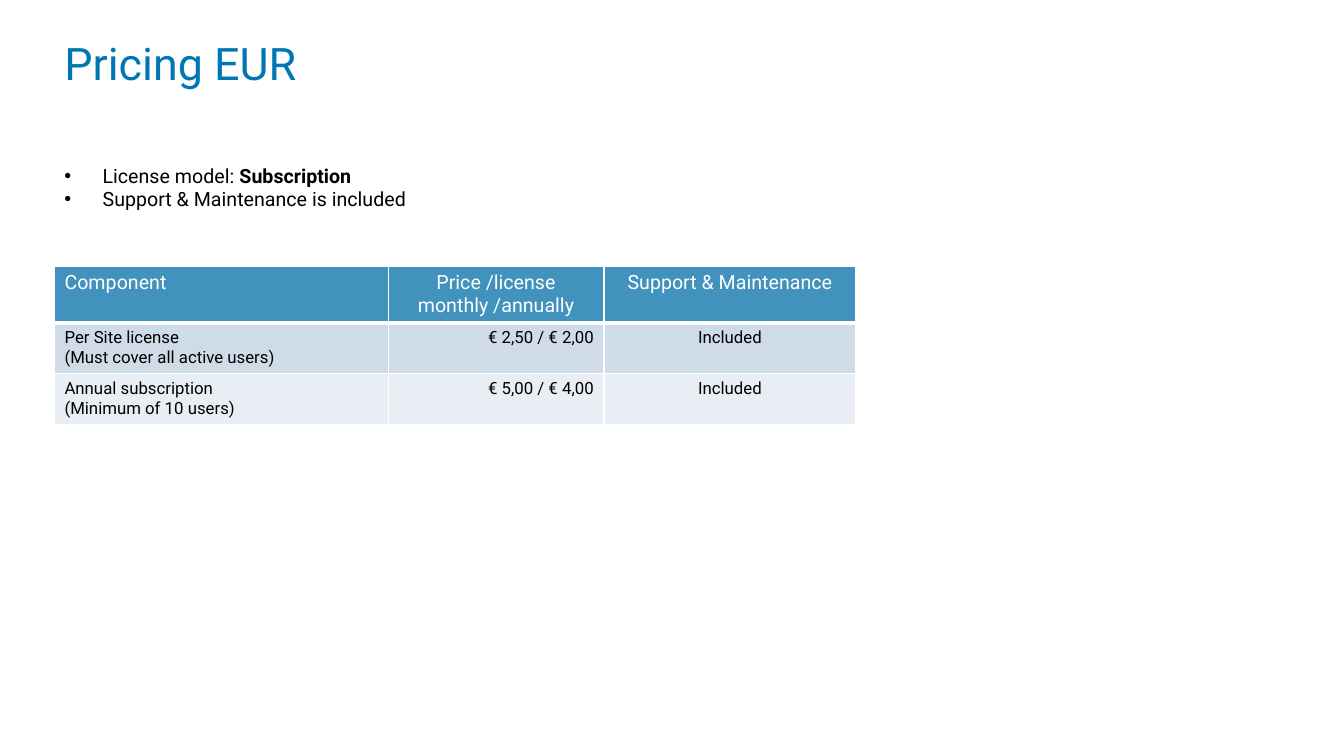
from dataclasses import dataclass

from lxml import etree
from pptx import Presentation
from pptx.dml.color import RGBColor
from pptx.enum.text import MSO_ANCHOR, PP_ALIGN
from pptx.oxml.ns import qn
from pptx.util import Inches, Pt

LEFT, CENTER, RIGHT = PP_ALIGN.LEFT, PP_ALIGN.CENTER, PP_ALIGN.RIGHT
MIDDLE, BOTTOM = MSO_ANCHOR.MIDDLE, MSO_ANCHOR.BOTTOM


@dataclass(frozen=True)
class Theme:
    font: str = "Roboto"
    title: str = "0077B3"
    text: str = "000000"
    white: str = "FFFFFF"
    header: str = "4192BD"
    bands: tuple = ("CFDCE8", "E9EEF4")
    title_size: int = 32
    body_size: int = 14
    cell_size: int = 12


THEME = Theme()
MARGIN = 0.54
COLUMN_WIDTHS = (3.31, 2.14, 2.5)
ROW_HEIGHTS = (0.56, 0.5, 0.5)
HEADER_ALIGNMENTS = (LEFT, CENTER, CENTER)
BODY_ALIGNMENTS = (LEFT, RIGHT, CENTER)
BULLETS = (
    (("License model: ", False), ("Subscription", True)),
    (("Support & Maintenance is included", False),),
)
PRICES = (
    ("Component", "Price /license\nmonthly /annually", "Support & Maintenance"),
    ("Per Site license\n(Must cover all active users)", "€ 2,50 / € 2,00", "Included"),
    ("Annual subscription\v(Minimum of 10 users)", "€ 5,00 / € 4,00", "Included"),
)


def set_font(paragraph, size, color):
    font = paragraph.font
    font.name = THEME.font
    font.size = Pt(size)
    font.color.rgb = RGBColor.from_string(color)


def add_text_box(slide, top, width, height, anchor):
    box = slide.shapes.add_textbox(
        Inches(MARGIN), Inches(top), Inches(width), Inches(height))
    frame = box.text_frame
    frame.word_wrap = True
    frame.vertical_anchor = anchor
    return frame


def add_title(slide, text):
    paragraph = add_text_box(slide, 0.36, 12.25, 0.6, MIDDLE).paragraphs[0]
    paragraph.text = text
    paragraph.line_spacing = 0.9
    set_font(paragraph, THEME.title_size, THEME.title)


def add_bullet_mark(paragraph):
    properties = paragraph._p.get_or_add_pPr()
    indent = Inches(0.38)
    properties.set("marL", str(indent))
    properties.set("indent", str(-indent))
    etree.SubElement(properties, qn("a:buFont"), typeface="Arial")
    etree.SubElement(properties, qn("a:buChar"), char="•")


def add_bullets(slide, bullets):
    frame = add_text_box(slide, 1.28, 11.26, 0.86, BOTTOM)
    for index, runs in enumerate(bullets):
        paragraph = frame.add_paragraph() if index else frame.paragraphs[0]
        add_bullet_mark(paragraph)
        set_font(paragraph, THEME.body_size, THEME.text)
        for text, bold in runs:
            run = paragraph.add_run()
            run.text = text
            run.font.bold = bold


def add_borders(cell, top, bottom):
    """Draw white borders; the top and bottom widths are in points."""
    properties = cell._tc.get_or_add_tcPr()
    for side, width in (("L", 1), ("R", 1), ("T", top), ("B", bottom)):
        line = etree.SubElement(properties, qn(f"a:ln{side}"), w=str(Pt(width)))
        fill = etree.SubElement(line, qn("a:solidFill"))
        etree.SubElement(fill, qn("a:srgbClr"), val=THEME.white)


def fill_cell(cell, text, alignment, size, color, background):
    cell.text = text
    cell.fill.solid()
    cell.fill.fore_color.rgb = RGBColor.from_string(background)
    for paragraph in cell.text_frame.paragraphs:
        paragraph.alignment = alignment
        set_font(paragraph, size, color)
        paragraph.font.bold = False


def add_price_table(slide, rows):
    table = slide.shapes.add_table(
        len(rows), len(COLUMN_WIDTHS), Inches(MARGIN), Inches(2.64),
        Inches(sum(COLUMN_WIDTHS)), Inches(sum(ROW_HEIGHTS))).table
    for column, width in zip(table.columns, COLUMN_WIDTHS):
        column.width = Inches(width)
    for row_index, texts in enumerate(rows):
        table.rows[row_index].height = Inches(ROW_HEIGHTS[row_index])
        if row_index == 0:
            alignments = HEADER_ALIGNMENTS
            style = (THEME.body_size, THEME.white, THEME.header)
        else:
            alignments = BODY_ALIGNMENTS
            style = (THEME.cell_size, THEME.text, THEME.bands[(row_index - 1) % 2])
        for column_index, (text, alignment) in enumerate(zip(texts, alignments)):
            cell = table.cell(row_index, column_index)
            add_borders(cell, top=3 if row_index == 1 else 1,
                        bottom=3 if row_index == 0 else 1)
            fill_cell(cell, text, alignment, *style)


def main():
    presentation = Presentation()
    presentation.slide_width = Inches(13.33)
    presentation.slide_height = Inches(7.5)
    slide = presentation.slides.add_slide(presentation.slide_layouts[6])
    add_title(slide, "Pricing EUR")
    add_bullets(slide, BULLETS)
    add_price_table(slide, PRICES)
    presentation.save("out.pptx")


if __name__ == "__main__":
    main()
